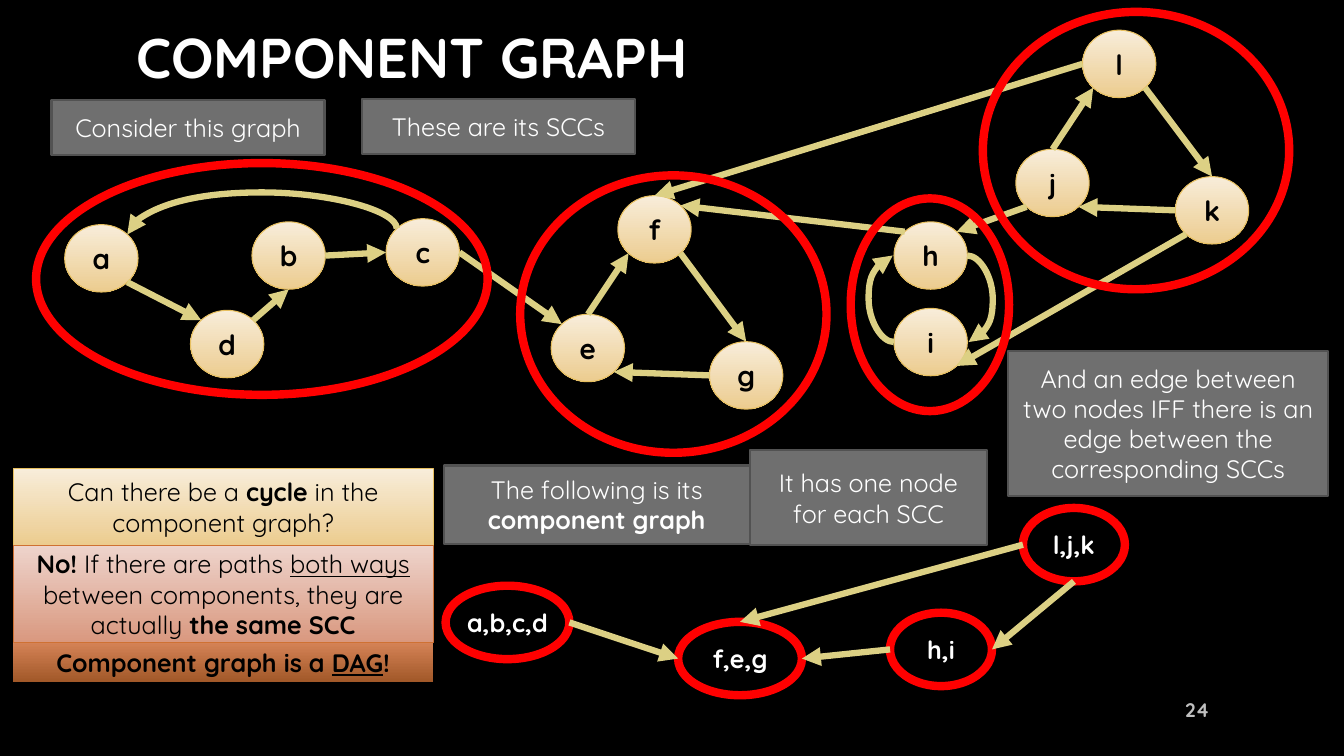
from lxml.etree import SubElement
from pptx import Presentation
from pptx.dml.color import RGBColor
from pptx.enum.shapes import MSO_CONNECTOR as Link, MSO_SHAPE as Shape
from pptx.enum.text import MSO_ANCHOR as Anchor, PP_ALIGN as Align
from pptx.oxml.ns import qn
from pptx.util import Cm, Pt

# All lengths are in centimetres, boxes are (left, top, width, height).
FONT = "Quicksand"
BLACK, WHITE, RED, EDGE = "000000", "FFFFFF", "FF0000", "DCD084"
GREY, GREY_LINE, NUMBER = "6F6F6F", "525252", "BFBFBF"
SAND, SAND_LINE = ("F8EDDA", "ECCC8F"), "E7BF5F"
ROSE, ROSE_LINE = ("EED4CC", "D9987F"), "CF7133"
RUST = ("D48256", "A15828")

TITLE = ("COMPONENT GRAPH", (3.18, 0, 27.51, 2.84))
PAGE_NUMBER = ("24", (29.21, 17.37, 1.52, 1.02))

NODE_SIZE = (1.85, 1.7)
NODES = {
    "a": (1.63, 5.66), "b": (6.35, 5.59), "c": (9.73, 5.51), "d": (4.8, 7.82),
    "e": (13.89, 7.92), "f": (15.57, 4.93), "g": (17.88, 8.61),
    "h": (22.53, 5.59), "i": (22.53, 7.77),
    "j": (25.6, 3.76), "k": (29.62, 4.45), "l": (27.28, 0.76),
}
COMPONENTS = {
    "a,b,c,d": (11.23, 14.76, 3.12, 1.85),
    "f,e,g": (17.09, 15.67, 3.12, 1.85),
    "h,i": (22.43, 15.44, 2.57, 1.85),
    "l,j,k": (25.78, 12.8, 2.57, 1.85),
}
# Each edge leaves one compass point of a node and enters another.
EDGES = [
    ("b", "e", "c", "w"), ("d", "ne", "b", "s"), ("a", "se", "d", "nw"),
    ("f", "se", "g", "n"), ("g", "w", "e", "se"), ("e", "n", "f", "sw"),
    ("c", "e", "e", "nw"), ("h", "nw", "f", "ne"),
    ("l", "se", "k", "n"), ("k", "w", "j", "se"), ("j", "n", "l", "sw"),
    ("l", "w", "f", "n"), ("k", "sw", "i", "se"), ("j", "sw", "h", "ne"),
    ("a,b,c,d", "e", "f,e,g", "w"), ("l,j,k", "w", "f,e,g", "n"),
    ("h,i", "w", "f,e,g", "e"), ("l,j,k", "s", "h,i", "e"),
]
SIDE_BENDS = [("h", "e", "i", "e"), ("i", "w", "h", "w")]
TOP_BEND = ("c", "nw", "a", "ne")
SIDE_BULGE, TOP_BULGE = 0.64, 0.91

RINGS = [
    (0.91, 4.11, 11.38, 5.84), (13.11, 4.42, 7.72, 6.99),
    (21.44, 5, 3.99, 5.36), (24.77, 0.3, 7.72, 6.99),
]
# Runs are (text, style), where style may hold b for bold and u for underline.
CAPTIONS = [
    ([("Consider this graph", "")], (1.3, 2.51, 6.88, 1.4)),
    ([("These are its SCCs", "")], (9.12, 2.49, 6.88, 1.4)),
    ([("The following is its ", ""), ("component graph", "b")],
     (11.18, 11.73, 7.72, 1.98)),
    ([("And an edge between two nodes IFF there is an edge between the "
       "corresponding SCCs", "")], (25.4, 8.84, 8.08, 3.66)),
    ([("It has one node for each SCC", "")], (18.9, 11.35, 5.97, 2.39)),
]
QUESTION_LEFT, QUESTION_TOP, QUESTION_WIDTH = 0.33, 11.81, 10.59
QUESTION = [
    ([("Can there be a ", ""), ("cycle", "b"),
      (" in the component graph?", "")], 1.93, SAND, SAND_LINE),
    ([("No!", "b"), (" If there are paths ", ""), ("both ways", "u"),
      (" between components, they are actually ", ""),
      ("the same SCC", "b")], 2.46, ROSE, ROSE_LINE),
    ([("Component graph is a ", "b"), ("DAG", "bu"), ("!", "b")],
     0.99, RUST, None),
]

COMPASS = {"n": (0, -1), "s": (0, 1), "w": (-1, 0), "e": (1, 0)}
DIAGONAL = 0.5 ** 0.5


def rgb(code):
    return RGBColor.from_string(code)


def write(shape, runs, size, color, align=Align.CENTER):
    frame = shape.text_frame
    frame.word_wrap = True
    frame.vertical_anchor = Anchor.MIDDLE
    paragraph = frame.paragraphs[0]
    paragraph.alignment = align
    font = paragraph.font
    font.name, font.size, font.color.rgb = FONT, Pt(size), rgb(color)
    all_bold = all("b" in style for _, style in runs)
    font.bold = all_bold
    for text, style in runs:
        run = paragraph.add_run()
        run.text = text
        if "b" in style and not all_bold:
            run.font.bold = True
        if "u" in style:
            run.font.underline = True


def add_box(kind, box, fill=None, line=None, width=0.75):
    """Add a shape; a pair of colours as fill runs from top to bottom."""
    shape = shapes.add_shape(kind, *map(Cm, box))
    shape.shadow.inherit = False
    if fill is None:
        shape.fill.background()
    elif isinstance(fill, tuple):
        shape.fill.gradient()
        shape.fill.gradient_angle = 270
        for stop, color in zip(shape.fill.gradient_stops, fill):
            stop.color.rgb = rgb(color)
    else:
        shape.fill.solid()
        shape.fill.fore_color.rgb = rgb(fill)
    if line:
        shape.line.color.rgb, shape.line.width = rgb(line), Pt(width)
    else:
        shape.line.fill.background()
    return shape


def add_label(label, box, size, color, align):
    write(shapes.add_textbox(*map(Cm, box)), [(label, "b")], size, color, align)


def site(node, direction):
    """Return the point of a node's outline in a compass direction."""
    left, top, width, height = outlines[node]
    reach = (DIAGONAL if len(direction) == 2 else 1) / 2
    dx, dy = (sum(COMPASS[d][axis] for d in direction) for axis in (0, 1))
    return left + width * (0.5 + reach * dx), top + height * (0.5 + reach * dy)


def add_arrow(start, end, kind=Link.STRAIGHT):
    arrow = shapes.add_connector(kind, *map(Cm, (*start, *end)))
    arrow.line.color.rgb, arrow.line.width = rgb(EDGE), Pt(4.5)
    properties = arrow._element.spPr
    SubElement(properties.find(qn("a:ln")), qn("a:tailEnd"), type="triangle")
    SubElement(properties, qn("a:effectLst"))
    return properties


def bend(properties, bulge, span):
    """Push the middle of a curved arrow out by bulge; span is its width."""
    guides = properties.find(qn("a:prstGeom")).get_or_add_avLst()
    SubElement(guides, qn("a:gd"), name="adj1",
               fmla=f"val {round(bulge / span * 100000)}")


def add_side_bend(tail, leave, head, enter):
    (x1, y1), (x2, y2) = site(tail, leave), site(head, enter)
    span = 0.03  # a curve needs some width to scale its bulge
    x2 += span * COMPASS[enter][0]
    bend(add_arrow((x1, y1), (x2, y2), Link.CURVE), SIDE_BULGE, span)


def add_top_bend(tail, leave, head, enter):
    """Arch from right to left: an upright curve given three quarter turns."""
    (x1, y1), (x2, y2) = site(tail, leave), site(head, enter)
    mid_x, mid_y = (x1 + x2) / 2, (y1 + y2) / 2
    half_w, half_h = (y2 - y1) / 2, (x1 - x2) / 2
    properties = add_arrow((mid_x + half_w, mid_y + half_h),
                           (mid_x - half_w, mid_y - half_h), Link.CURVE)
    properties.find(qn("a:xfrm")).set("rot", str(270 * 60000))
    bend(properties, -TOP_BULGE, 2 * half_w)


deck = Presentation()
deck.slide_width, deck.slide_height = Cm(33.87), Cm(19.05)
slide = deck.slides.add_slide(deck.slide_layouts[6])
slide.background.fill.solid()
slide.background.fill.fore_color.rgb = rgb(BLACK)
shapes = slide.shapes

add_label(*TITLE, 40, WHITE, Align.LEFT)

outlines = {name: (*corner, *NODE_SIZE) for name, corner in NODES.items()}
for name, box in outlines.items():
    write(add_box(Shape.OVAL, box, SAND, SAND_LINE), [(name, "b")], 20, BLACK)
for name, box in COMPONENTS.items():
    component = add_box(Shape.OVAL, box, line=RED, width=6)
    write(component, [(name, "b")], 18, WHITE)
    component.text_frame.word_wrap = False
outlines.update(COMPONENTS)

for tail, leave, head, enter in EDGES:
    add_arrow(site(tail, leave), site(head, enter))
for edge in SIDE_BENDS:
    add_side_bend(*edge)
add_top_bend(*TOP_BEND)

for runs, box in CAPTIONS:
    write(add_box(Shape.RECTANGLE, box, GREY, GREY_LINE, 1.5), runs, 18, WHITE)
for ring in RINGS:
    add_box(Shape.OVAL, ring, line=RED, width=6)

top = QUESTION_TOP
for runs, height, fill, line in QUESTION:
    box = (QUESTION_LEFT, top, QUESTION_WIDTH, height)
    write(add_box(Shape.RECTANGLE, box, fill, line), runs, 18, BLACK)
    top += height

add_label(*PAGE_NUMBER, 14, NUMBER, Align.RIGHT)
deck.save("out.pptx")
